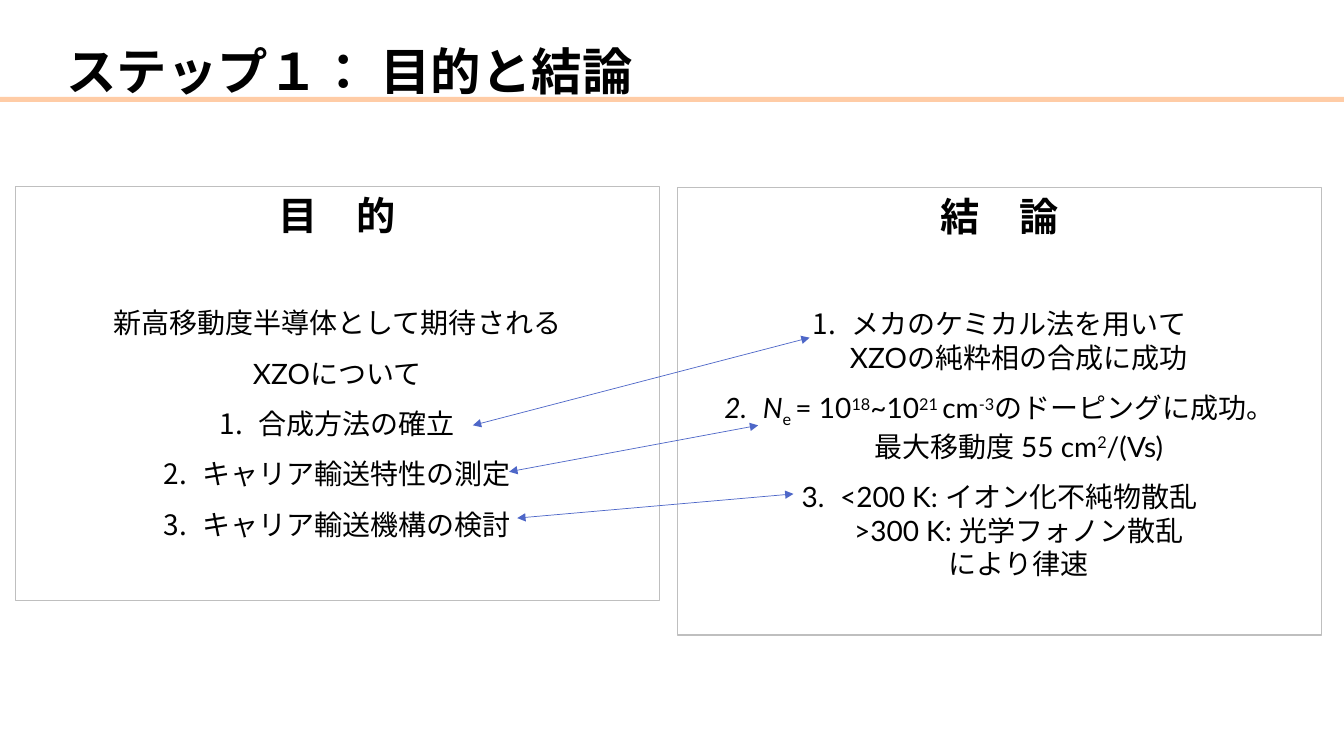
from copy import deepcopy
from dataclasses import dataclass

from lxml import etree
from pptx import Presentation
from pptx.dml.color import RGBColor
from pptx.enum.lang import MSO_LANGUAGE_ID
from pptx.enum.shapes import MSO_CONNECTOR, MSO_SHAPE
from pptx.enum.text import MSO_ANCHOR, MSO_AUTO_SIZE, PP_ALIGN
from pptx.oxml.ns import qn
from pptx.util import Inches, Pt

JAPANESE = MSO_LANGUAGE_ID.JAPANESE
RECT = MSO_SHAPE.RECTANGLE
STRAIGHT = MSO_CONNECTOR.STRAIGHT
TOP, MIDDLE = MSO_ANCHOR.TOP, MSO_ANCHOR.MIDDLE
FIXED = MSO_AUTO_SIZE.NONE
LEFT, CENTER = PP_ALIGN.LEFT, PP_ALIGN.CENTER
SUB, SUPER = -25, 30


@dataclass
class Theme:
    font: str = "Lato"
    ink: str = "000000"
    band: str = "FFCCA6"
    frame: str = "BFBFBF"
    arrow: str = "4E67C8"
    title: int = 36
    head: int = 28
    body: int = 20
    gap: int = 12
    head_gap: int = 48
    indent: float = 0.38


def color(code):
    return RGBColor.from_string(code)


def place(shape, left, top, width, height):
    shape.left, shape.top = Inches(left), Inches(top)
    shape.width, shape.height = Inches(width), Inches(height)


class Deck:
    def __init__(self, theme):
        self.theme = theme
        self.file = Presentation()
        self.file.slide_width = Inches(13.33)
        self.file.slide_height = Inches(7.5)
        self.slide = self.file.slides.add_slide(self.file.slide_layouts[3])

    def text(self, para, words, size, bold=False, italic=False, base=0):
        """Add one run per line of text, with line breaks of the same size."""
        for i, line in enumerate(words.split("\n")):
            if i:
                para.add_line_break()
                para._p[-1].append(deepcopy(run._r.rPr))
            run = para.add_run()
            run.text = line
            font = run.font
            font.name, font.size = self.theme.font, Pt(size)
            font.bold, font.italic = bold, italic
            font.color.rgb = color(self.theme.ink)
            font.language_id = JAPANESE
            if base:
                run._r.rPr.set("baseline", str(base * 1000))

    def layout(self, para, align, after, spacing=1.0, number=False):
        """Set alignment, spacing and numbering of a paragraph."""
        para.alignment = align
        para.line_spacing = spacing
        para.space_before, para.space_after = Pt(0), Pt(after)
        props = para._p.get_or_add_pPr()
        indent = Inches(self.theme.indent) if number else 0
        props.set("marL", str(indent))
        props.set("indent", str(-indent))
        if number:
            mark = etree.SubElement(props, qn("a:buFont"))
            mark.set("typeface", self.theme.font)
            mark = etree.SubElement(props, qn("a:buAutoNum"))
            mark.set("type", "arabicPeriod")
        else:
            etree.SubElement(props, qn("a:buNone"))

    def band(self, *box):
        """Draw the title rule behind everything else."""
        bar = self.slide.shapes.add_shape(RECT, *map(Inches, box))
        bar.shadow.inherit = False
        bar.fill.solid()
        bar.fill.fore_color.rgb = color(self.theme.band)
        bar.line.fill.background()
        self.slide.shapes._spTree.insert(2, bar._element)

    def title(self, words, *box):
        shape = self.slide.shapes.title
        place(shape, *box)
        frame = shape.text_frame
        frame.auto_size, frame.vertical_anchor = FIXED, MIDDLE
        para = frame.paragraphs[0]
        self.layout(para, LEFT, 0, spacing=0.9)
        self.text(para, words, self.theme.title, bold=True)

    def panel(self, index, box, head, intro, points):
        """Fill a framed body with a heading, plain lines and numbered points."""
        theme = self.theme
        shape = self.slide.placeholders[index]
        place(shape, *box)
        shape.line.color.rgb = color(theme.frame)
        shape.line.width = Pt(0.75)
        frame = shape.text_frame
        frame.auto_size, frame.vertical_anchor = FIXED, TOP
        frame.word_wrap = True
        para = frame.paragraphs[0]
        self.layout(para, CENTER, theme.head_gap)
        self.text(para, head, theme.head, bold=True)
        for i, runs in enumerate(intro + points):
            para = frame.add_paragraph()
            self.layout(para, CENTER, theme.gap, number=i >= len(intro))
            for words, style in runs:
                self.text(para, words, theme.body, **style)

    def arrow(self, *ends):
        line = self.slide.shapes.add_connector(STRAIGHT, *map(Inches, ends))
        line.line.color.rgb = color(self.theme.arrow)
        line.line.width = Pt(0.5)
        stroke = line.line._get_or_add_ln()
        for tag in ("a:headEnd", "a:tailEnd"):
            etree.SubElement(stroke, qn(tag)).set("type", "triangle")
        etree.SubElement(line._element.spPr, qn("a:effectLst"))


def plain(*lines):
    """Make each line a paragraph of one unstyled run."""
    return [[(line, {})] for line in lines]


def main():
    deck = Deck(Theme())
    deck.band(0, 0.96, 13.33, 0.05)
    deck.title("ステップ１： 目的と結論", 0.56, 0.3, 12.22, 0.88)
    deck.panel(
        1, (0.15, 1.85, 6.39, 4.11), "目　的",
        plain("新高移動度半導体として期待される", "XZOについて"),
        plain("合成方法の確立", "キャリア輸送特性の測定", "キャリア輸送機構の検討"),
    )
    high = {"base": SUPER}
    doping = [
        ("N", {"italic": True}), ("e ", {"base": SUB}),
        ("= 10", {}), ("18", high), ("~10", {}), ("21 ", high),
        ("cm", {}), ("-3", high),
        ("のドーピングに成功。\n最大移動度 55 cm", {}), ("2", high), ("/(Vs)", {}),
    ]
    method, limit = plain(
        "メカのケミカル法を用いて\nXZOの純粋相の合成に成功",
        "<200 K: イオン化不純物散乱\n>300 K: 光学フォノン散乱\nにより律速",
    )
    deck.panel(2, (6.72, 1.86, 6.39, 4.44), "結　論", [], [method, doping, limit])
    for ends in (
        (4.69, 4.22, 8.03, 3.35),
        (5.05, 4.68, 7.52, 4.22),
        (5.13, 5.14, 7.87, 4.9),
    ):
        deck.arrow(*ends)
    deck.file.save("out.pptx")


if __name__ == "__main__":
    main()
